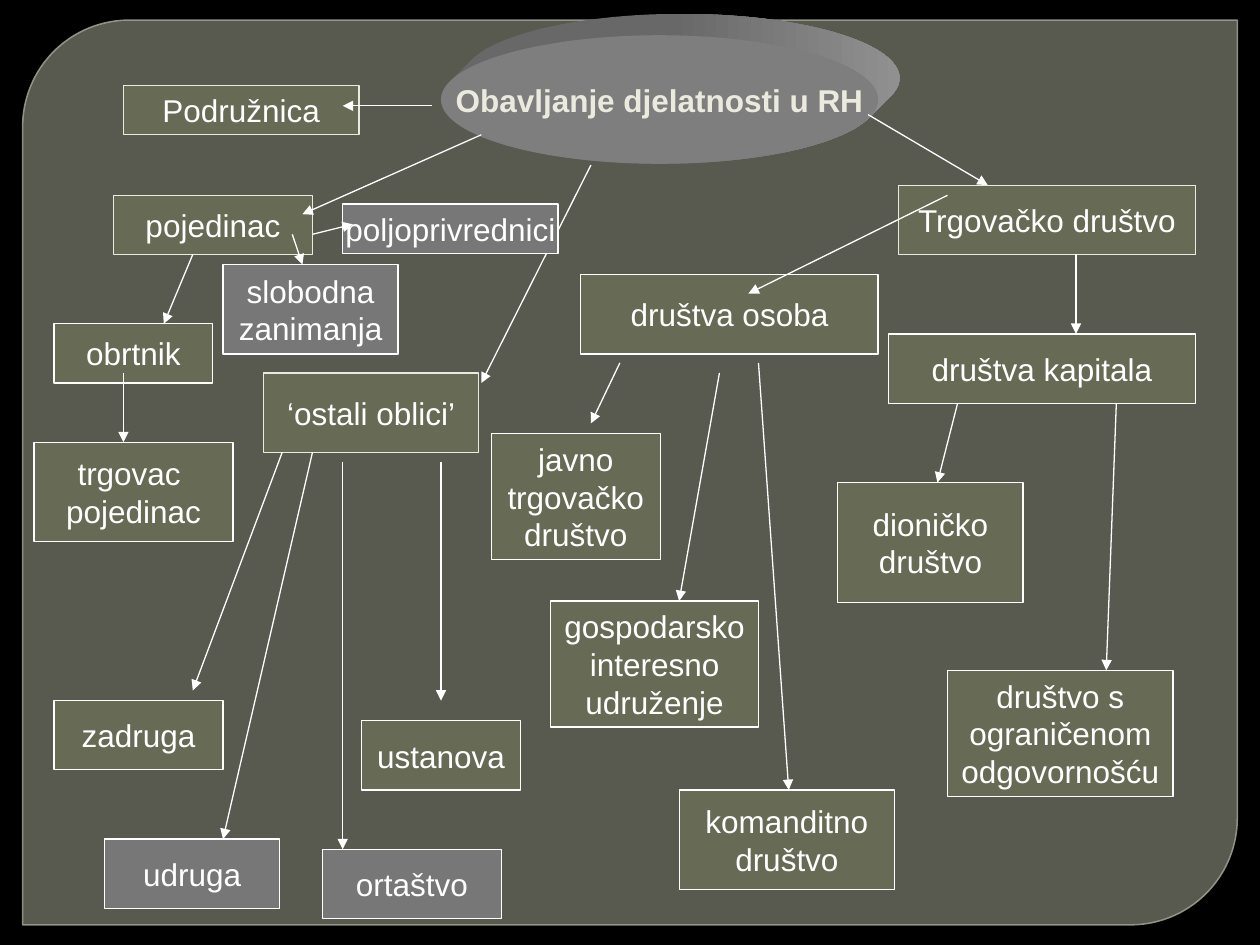
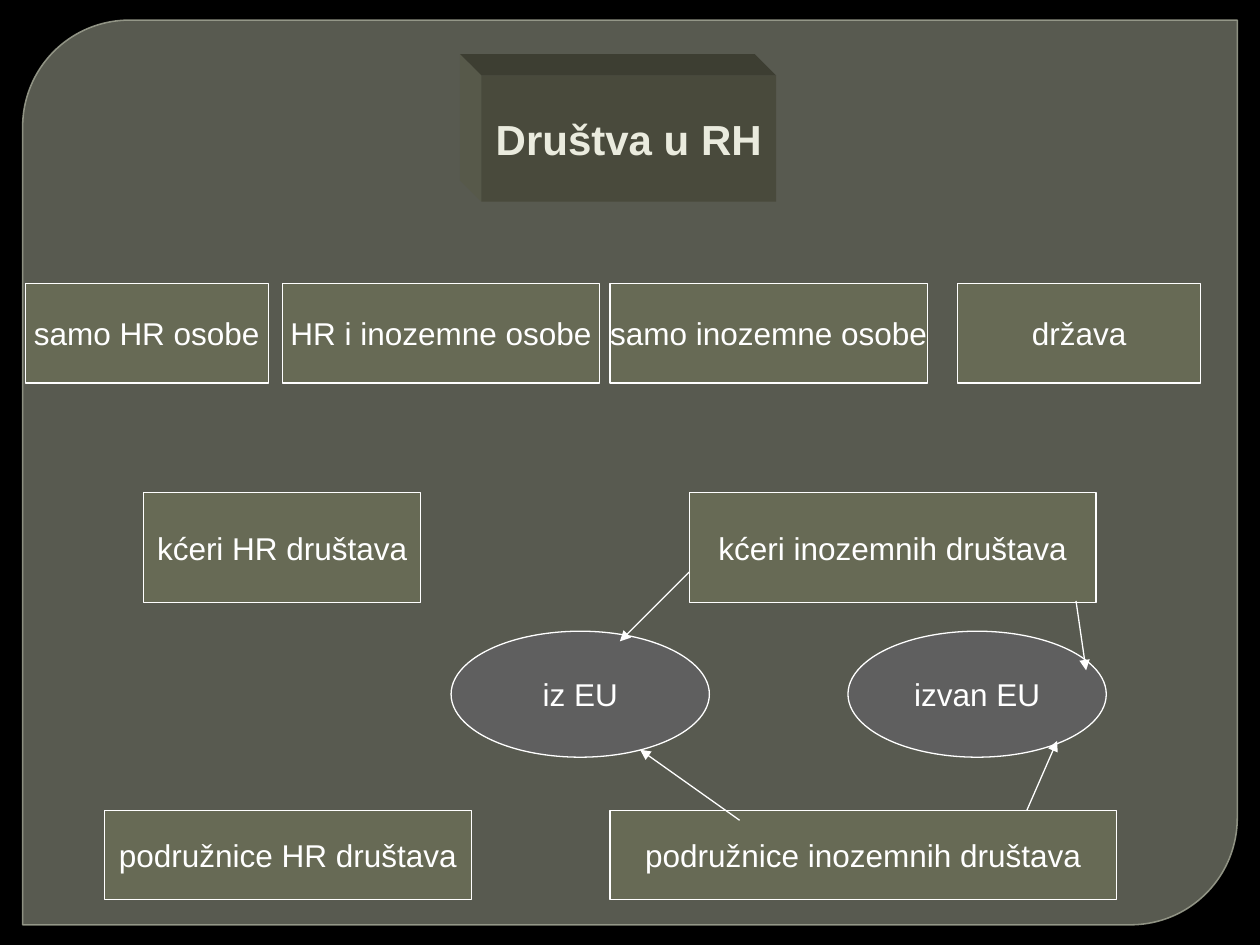
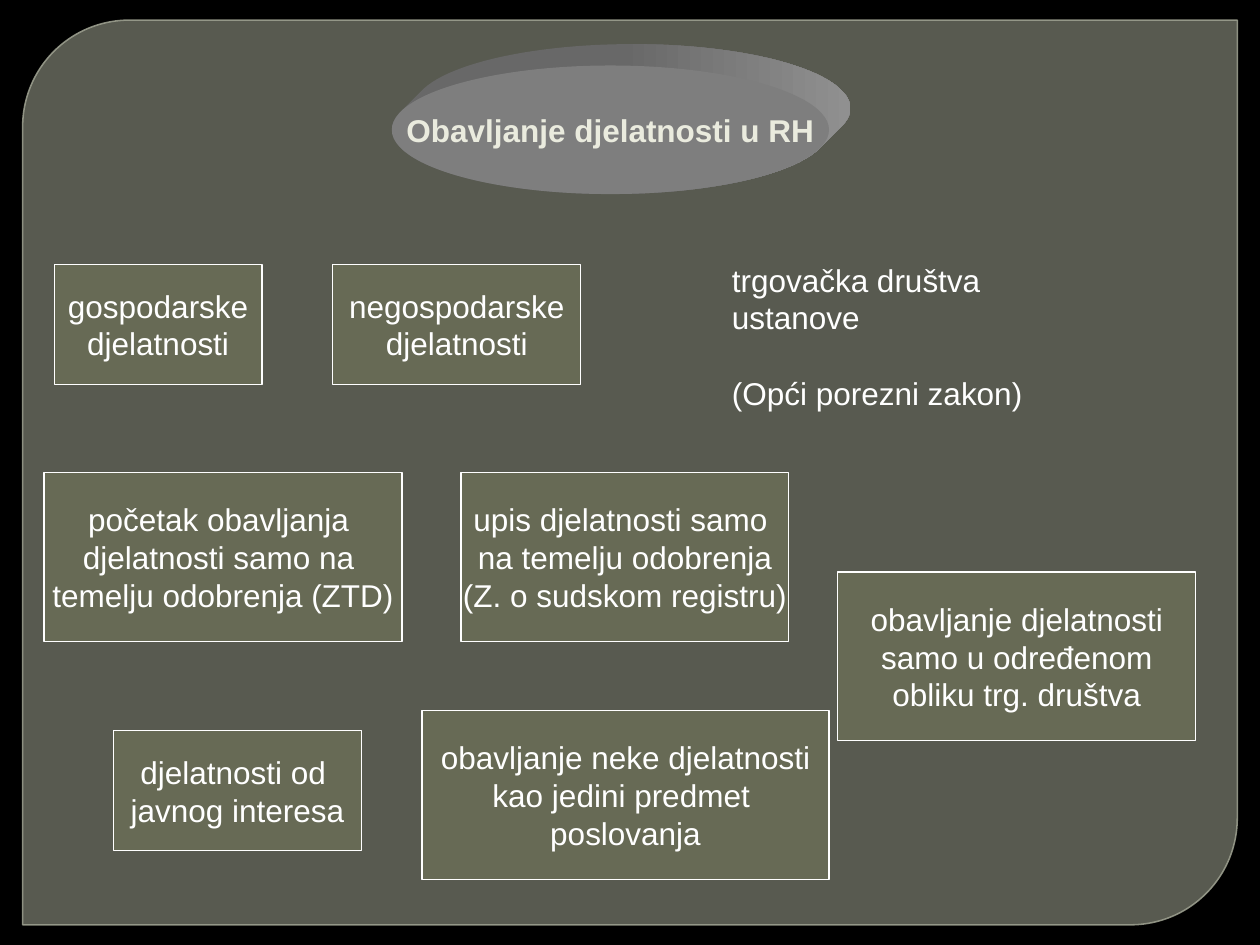
from math import cos, pi, sin

from lxml.etree import SubElement
from pptx import Presentation
from pptx.dml.color import RGBColor as Rgb
from pptx.enum.shapes import MSO_CONNECTOR as Connector, MSO_SHAPE as Preset
from pptx.enum.text import MSO_ANCHOR as Anchor, PP_ALIGN as Align
from pptx.oxml.ns import qn
from pptx.util import Inches, Pt


class Theme:
    font = "Arial"
    body_size = Pt(18)
    heading_size = Pt(24)
    hairline = Pt(0.75)
    backdrop = Rgb(0x00, 0x00, 0x00)
    panel = Rgb(0x88, 0x8B, 0x7B)
    panel_edge = Rgb(0x9D, 0xA0, 0x90)
    white = Rgb(0xFF, 0xFF, 0xFF)
    cream = Rgb(0xEA, 0xEB, 0xDE)
    olive = Rgb(0x67, 0x6A, 0x55)
    gray = Rgb(0x77, 0x77, 0x77)
    dark_gray = Rgb(0x5F, 0x5F, 0x5F)
    disc = Rgb(0x7E, 0x7E, 0x7E)
    disc_shade = Rgb(0x68, 0x68, 0x68)
    disc_light = Rgb(0x90, 0x90, 0x90)
    block = Rgb(0x49, 0x4A, 0x3C)
    block_top = Rgb(0x3D, 0x3E, 0x32)
    block_side = Rgb(0x57, 0x59, 0x4A)


def add_box(slide, text, place, fill=Theme.olive, edge=Theme.white,
            preset=Preset.RECTANGLE, color=Theme.white, size=Theme.body_size, bold=False):
    shape = slide.shapes.add_shape(preset, *map(Inches, place))
    shape.shadow.inherit = False
    shape.fill.solid()
    shape.fill.fore_color.rgb = fill
    if edge is None:
        shape.line.fill.background()
    else:
        shape.line.color.rgb = edge
        shape.line.width = Theme.hairline
    frame = shape.text_frame
    frame.word_wrap = False
    frame.vertical_anchor = Anchor.MIDDLE
    frame.text = text
    for paragraph in frame.paragraphs:
        paragraph.alignment = Align.CENTER
        paragraph.font.name = Theme.font
        paragraph.font.size = size
        paragraph.font.bold = bold
        paragraph.font.color.rgb = color
    return shape


def add_arrow(slide, *ends):
    connector = slide.shapes.add_connector(Connector.STRAIGHT, *map(Inches, ends))
    connector.line.color.rgb = Theme.white
    connector.line.width = Theme.hairline
    SubElement(connector.line._get_or_add_ln(), qn("a:tailEnd"), type="triangle")
    SubElement(connector._element.spPr, qn("a:effectLst"))


presentation = Presentation()
presentation.slide_width = Inches(10)
presentation.slide_height = Inches(7.5)
background = presentation.slide_master.background.fill
background.solid()
background.fore_color.rgb = Theme.backdrop

blank = presentation.slide_layouts[6]
forms, companies, activities = [presentation.slides.add_slide(blank) for _ in range(3)]

for slide in (forms, companies, activities):
    panel = add_box(slide, "", (0.18, 0.16, 9.64, 7.18), Theme.panel, Theme.panel_edge,
                    Preset.ROUND_2_DIAG_RECTANGLE)
    panel.adjustments[0] = 0.118
    panel.adjustments[1] = 0
    panel.line.width = Pt(0.87)
    for paint, opacity in ((panel.fill, 65), (panel.line.fill, 88)):
        color = paint._xPr.find(qn("a:solidFill"))[0]
        SubElement(color, qn("a:alpha"), val=str(opacity * 1000))

depth = 0.17
disc_width, disc_height = 3.47, 1.02
for slide, left, top in ((forms, 3.5, 0.28), (activities, 3.11, 0.52)):
    radius_x, radius_y = disc_width / 2, disc_height / 2
    outline = []
    for step in range(120):
        angle = step * pi / 60
        shift = depth if cos(angle) / radius_x > sin(angle) / radius_y else 0
        outline.append((Inches(left + radius_x * (1 + cos(angle)) + shift),
                        Inches(top + radius_y * (1 + sin(angle)) - shift)))
    builder = slide.shapes.build_freeform(*outline[0])
    builder.add_line_segments(outline[1:])
    rim = builder.convert_to_shape()
    rim.shadow.inherit = False
    rim.line.fill.background()
    rim.fill.gradient()
    rim.fill.gradient_angle = 0
    for stop, color, position in zip(rim.fill.gradient_stops,
                                     (Theme.disc_shade, Theme.disc_light), (0.5, 1)):
        stop.color.rgb = color
        stop.position = position
    add_box(slide, "Obavljanje djelatnosti u RH", (left, top, disc_width, disc_height),
            Theme.disc, None, Preset.OVAL, Theme.cream, bold=True)

for text, *place in (
    ("pojedinac", 0.9, 1.55, 1.58, 0.47),
    ("Trgovačko društvo", 7.13, 1.47, 2.36, 0.55),
    ("Podružnica", 0.98, 0.68, 1.87, 0.39),
    ("‘ostali oblici’", 2.09, 2.96, 1.71, 0.63),
):
    add_box(forms, text, place, edge=Theme.cream)

for text, *place in (
    ("obrtnik", 0.43, 2.57, 1.26, 0.47),
    ("trgovac \npojedinac", 0.27, 3.51, 1.58, 0.79),
    ("društva osoba", 4.61, 2.18, 2.36, 0.63),
    ("društva kapitala", 7.05, 2.65, 2.44, 0.55),
    ("zadruga", 0.43, 5.56, 1.34, 0.55),
    ("ustanova", 2.87, 5.72, 1.26, 0.55),
    ("javno\ntrgovačko\ndruštvo", 3.9, 3.44, 1.34, 1),
    ("gospodarsko\ninteresno\nudruženje", 4.37, 4.77, 1.65, 1),
    ("komanditno\ndruštvo", 5.39, 6.27, 1.71, 0.79),
    ("dioničko\ndruštvo", 6.65, 3.83, 1.47, 0.95),
    ("društvo s\nograničenom\nodgovornošću", 7.52, 5.32, 1.79, 1),
):
    add_box(forms, text, place)

for ends in (
    (3.43, 0.84, 2.72, 0.84),
    (3.82, 1.07, 2.4, 1.7),
    (6.89, 0.91, 7.84, 1.47),
    (1.53, 2.02, 1.3, 2.57),
    (0.98, 2.96, 0.98, 3.51),
    (7.52, 1.55, 5.94, 2.33),
    (8.54, 2.02, 8.54, 2.65),
    (2.24, 3.59, 1.53, 5.48),
    (3.5, 3.67, 3.5, 5.56),
    (4.92, 2.88, 4.69, 3.36),
    (5.71, 2.96, 5.39, 4.77),
    (6.02, 2.88, 6.26, 6.27),
    (7.6, 3.2, 7.44, 3.83),
    (8.86, 3.2, 8.78, 5.32),
    (4.69, 1.31, 3.82, 3.04),
):
    add_arrow(forms, *ends)

for text, *place in (
    ("slobodna\nzanimanja", 1.77, 2.1, 1.39, 0.71),
    ("poljoprivrednici", 2.72, 1.62, 1.71, 0.39),
    ("udruga", 0.83, 6.66, 1.39, 0.55),
    ("ortaštvo", 2.56, 6.74, 1.42, 0.55),
):
    add_box(forms, text, place, Theme.gray)

for ends in (
    (2.32, 1.86, 2.4, 2.1),
    (2.48, 1.86, 2.8, 1.78),
    (2.48, 3.59, 1.77, 6.66),
    (2.72, 3.67, 2.72, 6.74),
):
    add_arrow(forms, *ends)

left, top, width, height = 3.82, 0.6, 2.34, 1
back_left, back_top = left - depth, top - depth
for color, corners in (
    (Theme.block_top, ((left, top), (back_left, back_top),
                       (back_left + width, back_top), (left + width, top))),
    (Theme.block_side, ((left, top), (back_left, back_top),
                        (back_left, back_top + height), (left, top + height))),
):
    points = [(Inches(x), Inches(y)) for x, y in corners]
    builder = companies.shapes.build_freeform(*points[0])
    builder.add_line_segments(points[1:])
    face = builder.convert_to_shape()
    face.shadow.inherit = False
    face.line.fill.background()
    face.fill.solid()
    face.fill.fore_color.rgb = color
add_box(companies, "Društva u RH", (left, top, width, height), Theme.block, None,
        color=Theme.cream, size=Theme.heading_size, bold=True)

for top, height, row in (
    (2.25, 0.79, (("samo HR osobe", 0.2, 1.93), ("HR i inozemne osobe", 2.24, 2.52),
                  ("samo inozemne osobe", 4.84, 2.52), ("država", 7.6, 1.93))),
    (3.91, 0.87, (("kćeri HR društava", 1.14, 2.2),
                  ("kćeri inozemnih društava", 5.47, 3.23))),
    (6.43, 0.71, (("podružnice HR društava", 0.83, 2.91),
                  ("podružnice inozemnih društava", 4.84, 4.02))),
):
    for text, left, width in row:
        add_box(companies, text, (left, top, width, height))

for text, left in (("iz EU", 3.58), ("izvan EU", 6.73)):
    add_box(companies, text, (left, 5.01, 2.05, 1), Theme.dark_gray, preset=Preset.OVAL)

for ends in (
    (5.47, 4.54, 4.92, 5.09),
    (8.54, 4.77, 8.62, 5.32),
    (5.87, 6.51, 5.08, 5.95),
    (8.15, 6.43, 8.39, 5.88),
):
    add_arrow(companies, *ends)

for text, *place in (
    ("početak obavljanja \ndjelatnosti samo na \ntemelju odobrenja (ZTD)", 0.35, 3.75, 2.84, 1.34),
    ("gospodarske\ndjelatnosti", 0.43, 2.1, 1.65, 0.95),
    ("negospodarske\ndjelatnosti", 2.64, 2.1, 1.97, 0.95),
    ("upis djelatnosti samo \nna temelju odobrenja\n(Z. o sudskom registru)", 3.66, 3.75, 2.6, 1.34),
    ("djelatnosti od \njavnog interesa", 0.9, 5.8, 1.97, 0.95),
    ("obavljanje djelatnosti\nsamo u određenom\nobliku trg. društva", 6.65, 4.54, 2.84, 1.34),
    ("obavljanje neke djelatnosti\nkao jedini predmet \nposlovanja", 3.35, 5.64, 3.23, 1.34),
):
    add_box(activities, text, place)

law_note = activities.shapes.add_textbox(*map(Inches, (5.71, 2.02, 2.52, 1.3))).text_frame
law_note.word_wrap = True
law_note.text = "trgovačka društva\nustanove\n(Opći porezni zakon)"
for paragraph in law_note.paragraphs:
    paragraph.font.name = Theme.font
    paragraph.font.size = Theme.body_size
    paragraph.font.color.rgb = Theme.white
law_note.paragraphs[2].space_before = Pt(21.5)

presentation.save("out.pptx")
